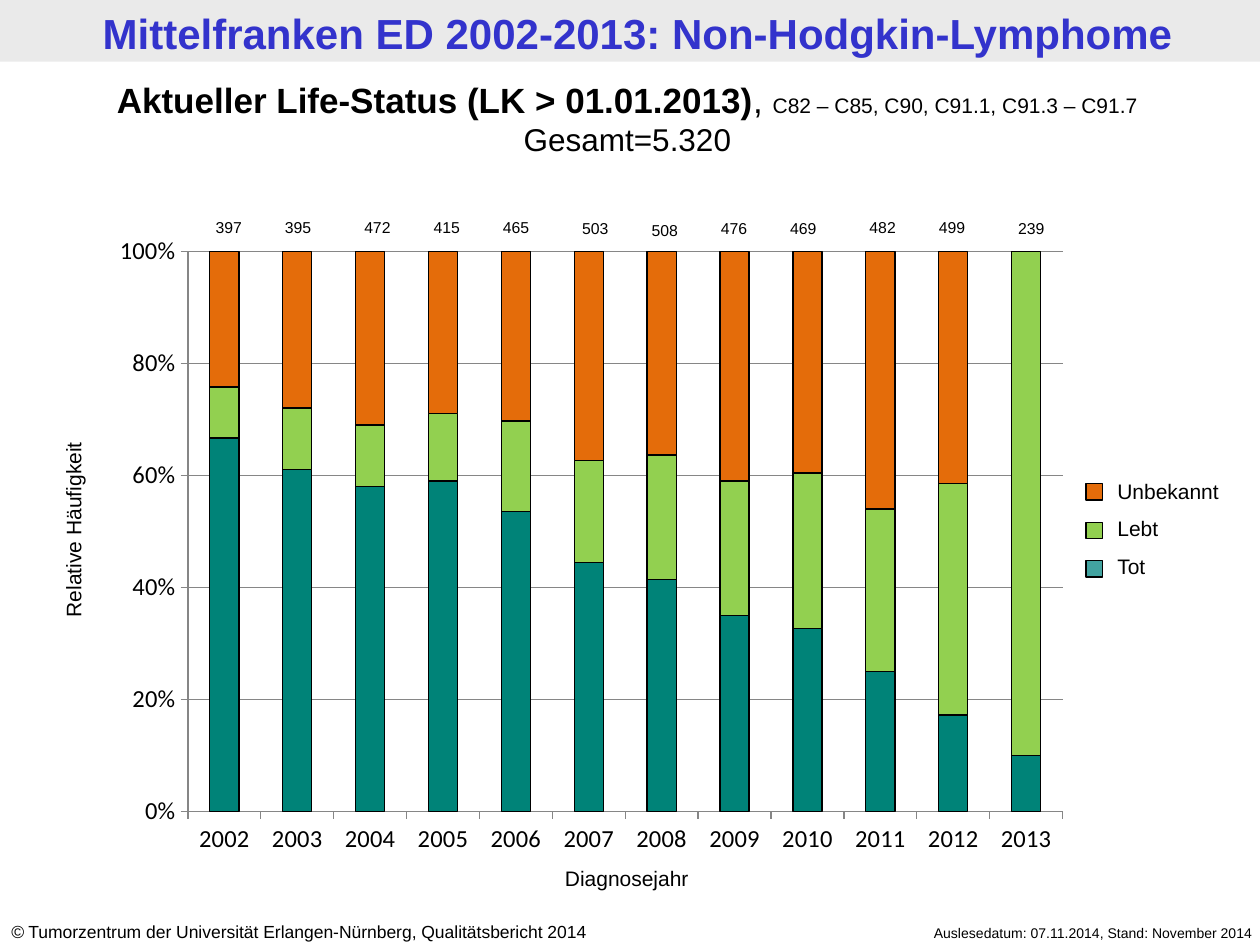
from lxml import etree
from pptx import Presentation
from pptx.chart.data import CategoryChartData
from pptx.dml.color import RGBColor
from pptx.enum.chart import XL_CHART_TYPE, XL_TICK_MARK
from pptx.enum.shapes import MSO_SHAPE
from pptx.enum.text import MSO_ANCHOR, MSO_AUTO_SIZE, PP_ALIGN
from pptx.oxml import parse_xml
from pptx.oxml.ns import nsdecls, qn
from pptx.util import Inches, Pt

LEFT, CENTER, RIGHT = PP_ALIGN.LEFT, PP_ALIGN.CENTER, PP_ALIGN.RIGHT
TOP, BOTTOM = MSO_ANCHOR.TOP, MSO_ANCHOR.BOTTOM
GROW = MSO_AUTO_SIZE.SHAPE_TO_FIT_TEXT
STACKED = XL_CHART_TYPE.COLUMN_STACKED_100
OUTSIDE = XL_TICK_MARK.OUTSIDE
COLORS = {"band": "EAEAEA", "title": "3333CC", "text": "000000", "grid": "868686",
          "dead": "008378", "dead_key": "008380", "alive": "92D050", "unknown": "E46C0A"}

YEARS = [str(year) for year in range(2002, 2014)]
SERIES = [
    ("Tot", "dead", (66, 61, 58, 59, 53, 44, 41, 35, 33, 25, 17, 10)),
    ("Lebt", "alive", (9, 11, 11, 12, 16, 18, 22, 24, 28, 29, 41, 90)),
    ("Unbekannt", "unknown", (24, 28, 31, 29, 30, 37, 36, 41, 40, 46, 41, 0)),
]
# case count, left and top of each label above the columns
TOTALS = [
    (397, 1.54, 1.68), (395, 2.09, 1.68), (472, 2.72, 1.68), (415, 3.27, 1.68),
    (465, 3.82, 1.68), (503, 4.45, 1.69), (508, 5, 1.7), (476, 5.55, 1.69),
    (469, 6.1, 1.69), (482, 6.73, 1.68), (499, 7.28, 1.68), (239, 7.91, 1.69),
]


def rgb(name):
    return RGBColor.from_string(COLORS[name])


def set_font(font, size, **formats):
    values = {"name": "Arial", "size": Pt(size), **formats}
    color = values.pop("color", "text")
    for attribute, value in values.items():
        setattr(font, attribute, value)
    font.color.rgb = rgb(color)


def add_text(slide, box, paragraphs, align=LEFT, space=0, anchor=TOP, rotation=0):
    """Each paragraph is a list of runs: (text, size, formats)."""
    shape = slide.shapes.add_textbox(*map(Inches, box))
    shape.rotation = rotation
    frame = shape.text_frame
    frame.word_wrap = True
    frame.auto_size = GROW
    frame.vertical_anchor = anchor
    for index, runs in enumerate(paragraphs):
        paragraph = frame.add_paragraph() if index else frame.paragraphs[0]
        paragraph.alignment = align
        if index and space:
            paragraph.space_before = Pt(space)
        for text, size, formats in runs:
            run = paragraph.add_run()
            run.text = text
            set_font(run.font, size, **formats)
    return shape


def add_box(slide, box, color, outlined=False):
    shape = slide.shapes.add_shape(MSO_SHAPE.RECTANGLE, *map(Inches, box))
    shape.shadow.inherit = False
    shape.fill.solid()
    shape.fill.fore_color.rgb = rgb(color)
    if outlined:
        draw_line(shape.line, "text")
    else:
        shape.line.fill.background()
    return shape


def draw_line(line, color):
    line.color.rgb = rgb(color)
    line.width = Pt(0.75)


def add_header(slide, left, top, width, height):
    add_box(slide, (left, top, width, height), "band")
    title = [("Mittelfranken ED 2002-2013: Non-Hodgkin-Lymphome", 24,
              {"bold": True, "color": "title"})]
    shape = add_text(slide, (left + 0.06, top + 0.01, width, height), [title],
                     CENTER, anchor=BOTTOM)
    shape.text_frame.margin_top = shape.text_frame.margin_bottom = Inches(0.04)


def add_subtitle(slide, box):
    add_text(slide, box, [
        [("Aktueller Life-Status (LK > 01.01.2013)", 20, {"bold": True}),
         (", ", 20, {}),
         ("C82 – C85, C90, C91.1, C91.3 – C91.7", 12, {})],
        [("Gesamt=5.320", 18, {})],
    ], CENTER)


def set_plot_area(chart, **fractions):
    """Fix the inner plot area as fractions of the chart."""
    plot_area = chart._chartSpace.chart.plotArea
    for layout in plot_area.findall(qn("c:layout")):
        plot_area.remove(layout)
    layout = parse_xml(f"<c:layout {nsdecls('c')}><c:manualLayout/></c:layout>")
    settings = {"layoutTarget": "inner", "xMode": "edge", "yMode": "edge", **fractions}
    for tag, value in settings.items():
        etree.SubElement(layout[0], qn(f"c:{tag}")).set("val", str(value))
    plot_area.insert(0, layout)


def add_status_chart(slide, box):
    data = CategoryChartData(number_format="0")
    data.categories = YEARS
    for name, _, values in SERIES:
        data.add_series(name, values)
    chart = slide.shapes.add_chart(STACKED, *map(Inches, box), data).chart
    chart.has_legend = chart.has_title = False
    set_font(chart.font, 14, name="Calibri")
    set_plot_area(chart, x=0.09, y=0.04, w=0.89, h=0.87)

    plot = chart.plots[0]
    plot.gap_width, plot.overlap, plot.vary_by_categories = 150, 100, False
    for series, (_, color, _) in zip(plot.series, SERIES):
        series.format.fill.solid()
        series.format.fill.fore_color.rgb = rgb(color)
        draw_line(series.format.line, "text")

    for axis in (chart.category_axis, chart.value_axis):
        axis.major_tick_mark = OUTSIDE
        set_font(axis.tick_labels.font, 14, name="Calibri")
        draw_line(axis.format.line, "grid")
    value_axis = chart.value_axis
    value_axis.minimum_scale, value_axis.maximum_scale = 0, 1
    value_axis.major_unit = 0.2
    value_axis.tick_labels.number_format = "0%"
    value_axis.tick_labels.number_format_is_linked = False
    value_axis.has_major_gridlines = True
    draw_line(value_axis.major_gridlines.format.line, "grid")


def add_chart_labels(slide):
    add_text(slide, (-0.62, 4.05, 2.41, 0.31), [[("Relative Häufigkeit", 12, {})]],
             CENTER, rotation=270)
    add_text(slide, (3.85, 6.82, 2.25, 0.31), [[("Diagnosejahr", 12, {})]], CENTER)
    for total, left, top in TOTALS:
        add_text(slide, (left, top, 0.55, 0.25), [[(str(total), 9, {})]], CENTER)


def add_legend(slide, left, top, width, height):
    entries = SERIES[::-1]
    add_text(slide, (left + 0.15, top, width - 0.15, height),
             [[(name, 12, {})] for name, _, _ in entries], space=6.9)
    for index, (_, color, _) in enumerate(entries):
        key_color = "dead_key" if color == "dead" else color
        key = add_box(slide, (left, top + 0.09 + index * 0.305, 0.13, 0.13),
                      key_color, outlined=True)
        if color == "dead":
            fill_color = key.fill._xPr.find(qn("a:solidFill"))[0]
            etree.SubElement(fill_color, qn("a:alpha")).set("val", "74000")


def add_footer(slide, top):
    add_text(slide, (6.65, top + 0.03, 3.39, 0.24),
             [[("Auslesedatum: 07.11.2014, Stand: November 2014", 8, {})]], RIGHT)
    add_text(slide, (-0.01, top, 5.24, 0.27), [[
        ("©", 10, {"italic": True}),
        (" Tumorzentrum der Universität Erlangen-Nürnberg, Qualitätsbericht 2014", 10, {}),
    ]])


def main():
    presentation = Presentation()
    presentation.slide_width, presentation.slide_height = Inches(10), Inches(7.5)
    slide = presentation.slides.add_slide(presentation.slide_layouts[6])
    add_header(slide, 0, 0, 10, 0.49)
    add_footer(slide, 7.26)
    add_status_chart(slide, (0.79, 1.79, 7.8, 5.11))
    add_chart_labels(slide)
    add_subtitle(slide, (-0.04, 0.57, 10.04, 0.74))
    add_legend(slide, 8.62, 3.75, 1.38, 0.91)
    presentation.save("out.pptx")


if __name__ == "__main__":
    main()
